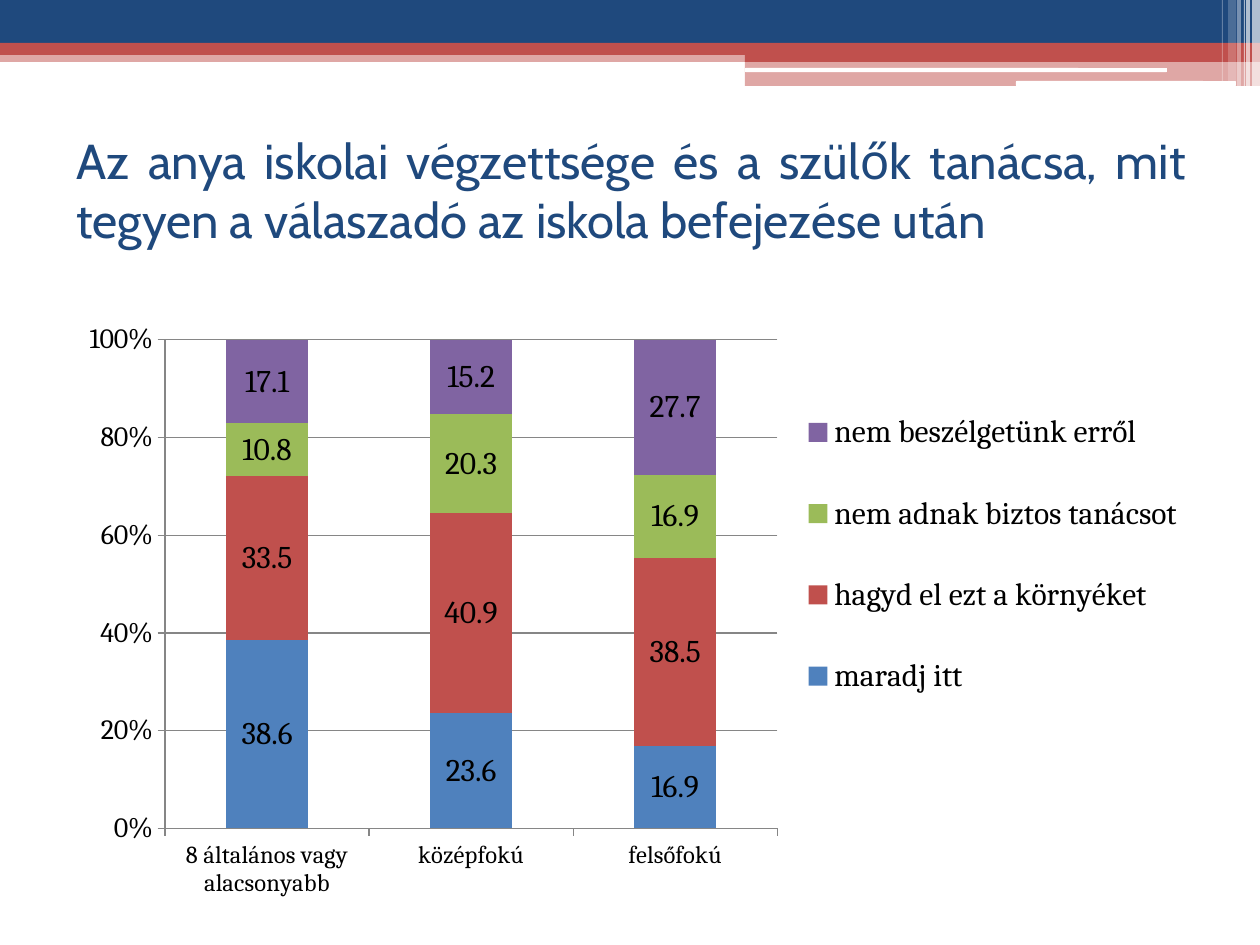
import pptx
import pptx.chart.data
import pptx.dml.color
import pptx.enum.chart
import pptx.enum.shapes
import pptx.enum.text
import pptx.oxml
import pptx.oxml.ns
import pptx.util

WHITE, NAVY, RED, GRAY = "FFFFFF", "1F497D", "C0504D", "868686"
BANDS = [
    (0, 50, 1260, 12, RED, 50),
    (0, 0, 1260, 43, NAVY, 100),
    (0, 43, 1260, 12, RED, 100),
    (745, 49, 515, 13, RED, 100),
    (745, 61, 515, 25, RED, 50),
]
PILLS = [(745, 68, 422, 4), (1016, 81, 220, 5)]
STRIPES = [
    (1252, 8, 86, 65),
    (1246, 4, 86, 65),
    (1244, 1, 86, 60),
    (1237, 4, 86, 40),
    (1228, 8, 81, 20),
    (1222, 1, 81, 30),
]
TITLE = "Az anya iskolai végzettsége és a szülők tanácsa, mit tegyen a válaszadó az iskola befejezése után"
CATS = ["8 általános vagy alacsonyabb", "középfokú", "felsőfokú"]
SERIES = [
    ("maradj itt", (38.6, 23.6, 16.9), "4F81BD"),
    ("hagyd el ezt a környéket", (33.5, 40.9, 38.5), RED),
    ("nem adnak biztos tanácsot", (10.8, 20.3, 16.9), "9BBB59"),
    ("nem beszélgetünk erről", (17.1, 15.2, 27.7), "8064A2"),
]


def px(num):
    return round(num * 914400 / 126)


def tint(code):
    return pptx.dml.color.RGBColor.from_string(code)


def style(font, size, face, color):
    font.size, font.name = pptx.util.Pt(size), face
    font.color.rgb = tint(color)


def write(frame, text, size=18, face="Cabin", color=NAVY, align="JUSTIFY"):
    para = frame.paragraphs[0]
    para.alignment = getattr(pptx.enum.text.PP_ALIGN, align)
    run = para.add_run()
    run.text = text
    style(run.font, size, face, color)


def place(part, left, top, wide, high, inner=False):
    for old in part.findall(pptx.oxml.ns.qn("c:layout")):
        part.remove(old)
    target = '<c:layoutTarget val="inner"/>' if inner else ""
    spots = zip("xywh", (left, top, wide, high))
    vals = "".join(f'<c:{key} val="{val}"/>' for key, val in spots)
    node = pptx.oxml.parse_xml(
        f'<c:layout {pptx.oxml.ns.nsdecls("c")}><c:manualLayout>{target}'
        f'<c:xMode val="edge"/><c:yMode val="edge"/>{vals}</c:manualLayout></c:layout>')
    part.insert(0 if inner else 1, node)


class Deck:
    """Holds the style and the current slide, and draws each kind of element."""

    def __init__(self, face):
        self.face = face
        self.file = pptx.Presentation()
        self.file.slide_width, self.file.slide_height = px(1260), px(945)
        self.slide = self.file.slides.add_slide(self.file.slide_layouts[6])

    def rect(self, left, top, wide, high, color, alpha=100, kind="RECTANGLE"):
        form = getattr(pptx.enum.shapes.MSO_SHAPE, kind)
        shape = self.slide.shapes.add_shape(form, px(left), px(top), px(wide), px(high))
        shape.shadow.inherit = False
        shape.line.fill.background()
        shape.fill.solid()
        shape.fill.fore_color.rgb = tint(color)
        if alpha < 100:
            node = shape.fill._xPr.find(".//" + pptx.oxml.ns.qn("a:srgbClr"))
            node.append(pptx.oxml.parse_xml(
                f'<a:alpha {pptx.oxml.ns.nsdecls("a")} val="{alpha * 1000}"/>'))

    def text(self, left, top, wide, high, words, **form):
        box = self.slide.shapes.add_textbox(px(left), px(top), px(wide), px(high))
        box.text_frame.word_wrap = True
        box.text_frame.vertical_anchor = pptx.enum.text.MSO_ANCHOR.MIDDLE
        write(box.text_frame, words, **form)

    def axis(self, axis, size):
        style(axis.tick_labels.font, size, self.face, "000000")
        axis.format.line.color.rgb = tint(GRAY)
        axis.major_tick_mark = pptx.enum.chart.XL_TICK_MARK.OUTSIDE

    def chart(self, left, top, wide, high, cats, series):
        data = pptx.chart.data.CategoryChartData()
        data.categories = cats
        for name, vals, _ in series:
            data.add_series(name, vals)
        kind = pptx.enum.chart.XL_CHART_TYPE.COLUMN_STACKED_100
        chart = self.slide.shapes.add_chart(
            kind, px(left), px(top), px(wide), px(high), data).chart
        style(chart.font, 18, self.face, "000000")
        chart.has_title = False
        plot = chart.plots[0]
        plot.gap_width, plot.overlap, plot.vary_by_categories = 150, 100, False
        for item, (_, _, color) in zip(plot.series, series):
            item.format.fill.solid()
            item.format.fill.fore_color.rgb = tint(color)
            item.data_labels.show_value = True
            style(item.data_labels.font, 18, self.face, "000000")
        self.axis(chart.category_axis, 14)
        scale = chart.value_axis
        self.axis(scale, 16)
        scale.minimum_scale, scale.maximum_scale, scale.major_unit = 0, 1, 0.2
        scale.tick_labels.number_format = "0%"
        scale.tick_labels.number_format_is_linked = False
        scale.has_major_gridlines = True
        scale.major_gridlines.format.line.color.rgb = tint(GRAY)
        chart.has_legend = True
        chart.legend.position = pptx.enum.chart.XL_LEGEND_POSITION.RIGHT
        chart.legend.include_in_layout = False
        style(chart.legend.font, 18, self.face, "000000")
        area = plot._element.getparent()
        place(area, 0.09, 0.05, 0.54, 0.82, inner=True)
        place(chart.legend._element, 0.65, 0.1, 0.34, 0.62)


def main():
    deck = Deck("Cambria")
    for band in BANDS:
        deck.rect(*band)
    for pill in PILLS:
        deck.rect(*pill, WHITE, kind="ROUNDED_RECTANGLE")
    for left, wide, high, alpha in STRIPES:
        deck.rect(left, 0, wide, high, WHITE, alpha)
    deck.text(64, 116, 1134, 147, TITLE, size=28)
    deck.chart(63, 310, 1134, 596, CATS, SERIES)
    deck.file.save("out.pptx")


if __name__ == "__main__":
    main()
